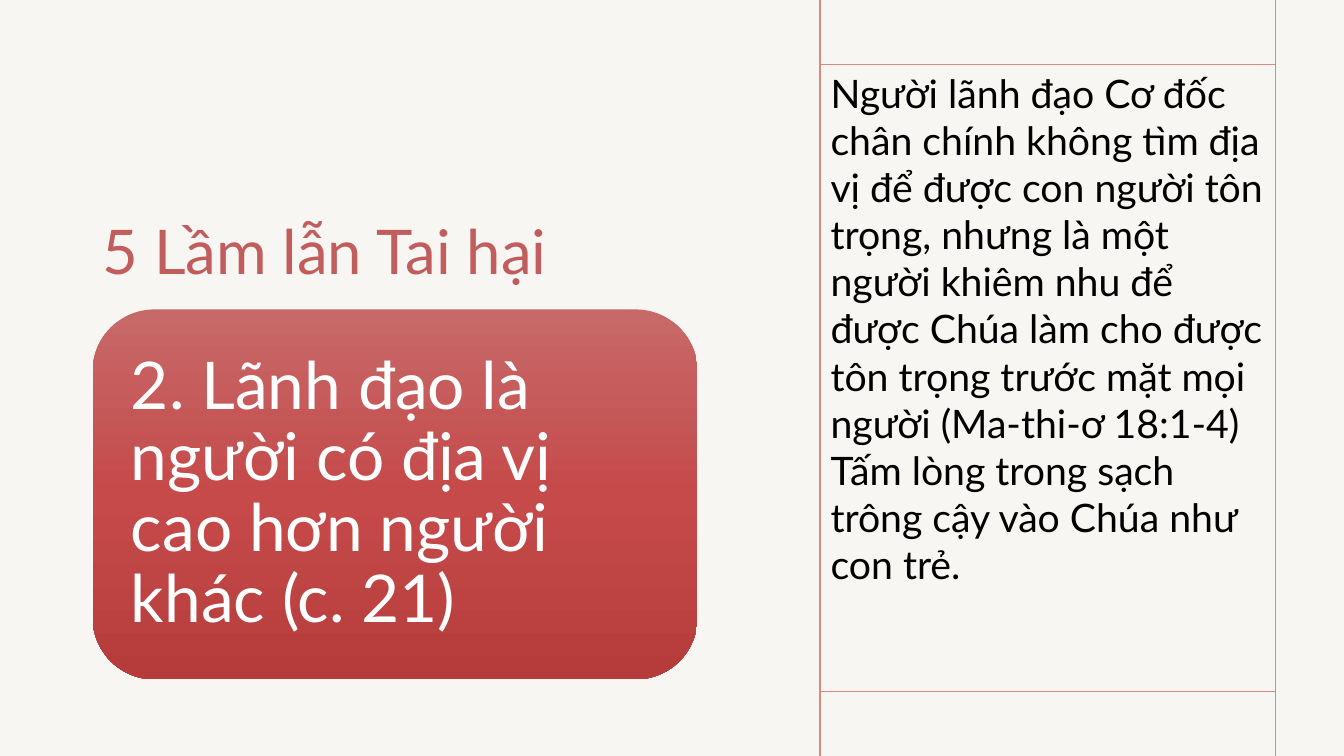
from copy import deepcopy

from lxml import etree
from pptx import Presentation
from pptx.dml.color import RGBColor
from pptx.enum.shapes import MSO_CONNECTOR, MSO_SHAPE
from pptx.enum.text import MSO_ANCHOR, PP_ALIGN
from pptx.oxml.ns import qn
from pptx.util import Inches, Pt

STRAIGHT = MSO_CONNECTOR.STRAIGHT
ROUNDED = MSO_SHAPE.ROUNDED_RECTANGLE
TOP, MIDDLE, BOTTOM = MSO_ANCHOR.TOP, MSO_ANCHOR.MIDDLE, MSO_ANCHOR.BOTTOM
LEFT = PP_ALIGN.LEFT


def color(hex_string):
    return RGBColor.from_string(hex_string)


class SlideBuilder:
    font = "Lato"
    background = "F8F6F2"
    rule = "D8897E"

    def __init__(self, presentation):
        self.width = presentation.slide_width
        self.height = presentation.slide_height
        self.slide = presentation.slides.add_slide(presentation.slide_layouts[6])
        fill = self.slide.background.fill
        fill.solid()
        fill.fore_color.rgb = color(self.background)

    def place(self, *percents):
        sides = (self.width, self.height) * 2
        return [round(side * percent / 100) for side, percent in zip(sides, percents)]

    def line(self, *ends):
        connector = self.slide.shapes.add_connector(STRAIGHT, *self.place(*ends))
        connector.line.color.rgb = color(self.rule)
        connector.line.width = Pt(1)
        properties = connector.element.find(qn("p:spPr"))
        etree.SubElement(properties, qn("a:effectLst"))

    def fill_text(self, shape, paragraphs, size, text_color, **frame_format):
        frame = shape.text_frame
        for name, value in {"word_wrap": True, **frame_format}.items():
            setattr(frame, name, value)
        for index, text in enumerate(paragraphs):
            paragraph = frame.add_paragraph() if index else frame.paragraphs[0]
            paragraph.alignment = LEFT
            run = paragraph.add_run()
            run.text = text
            for name, value in {"name": self.font, "size": Pt(size)}.items():
                setattr(run.font, name, value)
            run.font.color.rgb = color(text_color)
        return frame

    def text(self, box, paragraphs, size, text_color, anchor=TOP):
        shape = self.slide.shapes.add_textbox(*self.place(*box))
        self.fill_text(shape, paragraphs, size, text_color, vertical_anchor=anchor)

    def gradient_card(self, box, stops, text, size, text_color, inset):
        shape = self.slide.shapes.add_shape(ROUNDED, *self.place(*box))
        shape.shadow.inherit = False
        shape.line.fill.background()
        shape.fill.gradient()
        shape.fill.gradient_angle = 270
        stop_list = shape.element.find(".//" + qn("a:gsLst"))
        stop_list.insert(1, deepcopy(stop_list[0]))
        for stop, (position, hex_string) in zip(shape.fill.gradient_stops, stops):
            stop.position = position
            stop.color.rgb = color(hex_string)
        margins = {f"margin_{side}": Inches(inset) for side in ("left", "top", "right", "bottom")}
        frame = self.fill_text(shape, [text], size, text_color, vertical_anchor=MIDDLE, **margins)
        frame.paragraphs[0].line_spacing = 0.9


def main():
    presentation = Presentation()
    presentation.slide_width = Inches(13.33)
    presentation.slide_height = Inches(7.5)
    builder = SlideBuilder(presentation)

    builder.text((6.9, 10.67, 45, 27.87), ["5 Lầm lẫn Tai hại"], 44, "C25D5D", BOTTOM)

    panel_left, panel_right = 61, 94.9
    for column in (panel_left, panel_right):
        builder.line(column, 0, column, 100)
    for row in (8.53, 91.47):
        builder.line(panel_left, row, panel_right, row)

    builder.gradient_card(
        (6.9, 40.93, 45, 48.93),
        ((0, "C76969"), (0.5, "C64A4A"), (1, "B63C3C")),
        "2. Lãnh đạo là người có địa vị cao hơn người khác (c. 21)",
        47, "FFFFFF", 0.2,
    )

    builder.text(
        (61.06, 8.53, 33.76, 76.8),
        [
            "Người lãnh đạo Cơ đốc chân chính không tìm địa vị để được con người "
            "tôn trọng, nhưng là một người khiêm nhu để được Chúa làm cho được "
            "tôn trọng trước mặt mọi người (Ma-thi-ơ 18:1-4)",
            "Tấm lòng trong sạch trông cậy vào Chúa như con trẻ.",
        ],
        28, "000000",
    )
    presentation.save("out.pptx")


if __name__ == "__main__":
    main()
